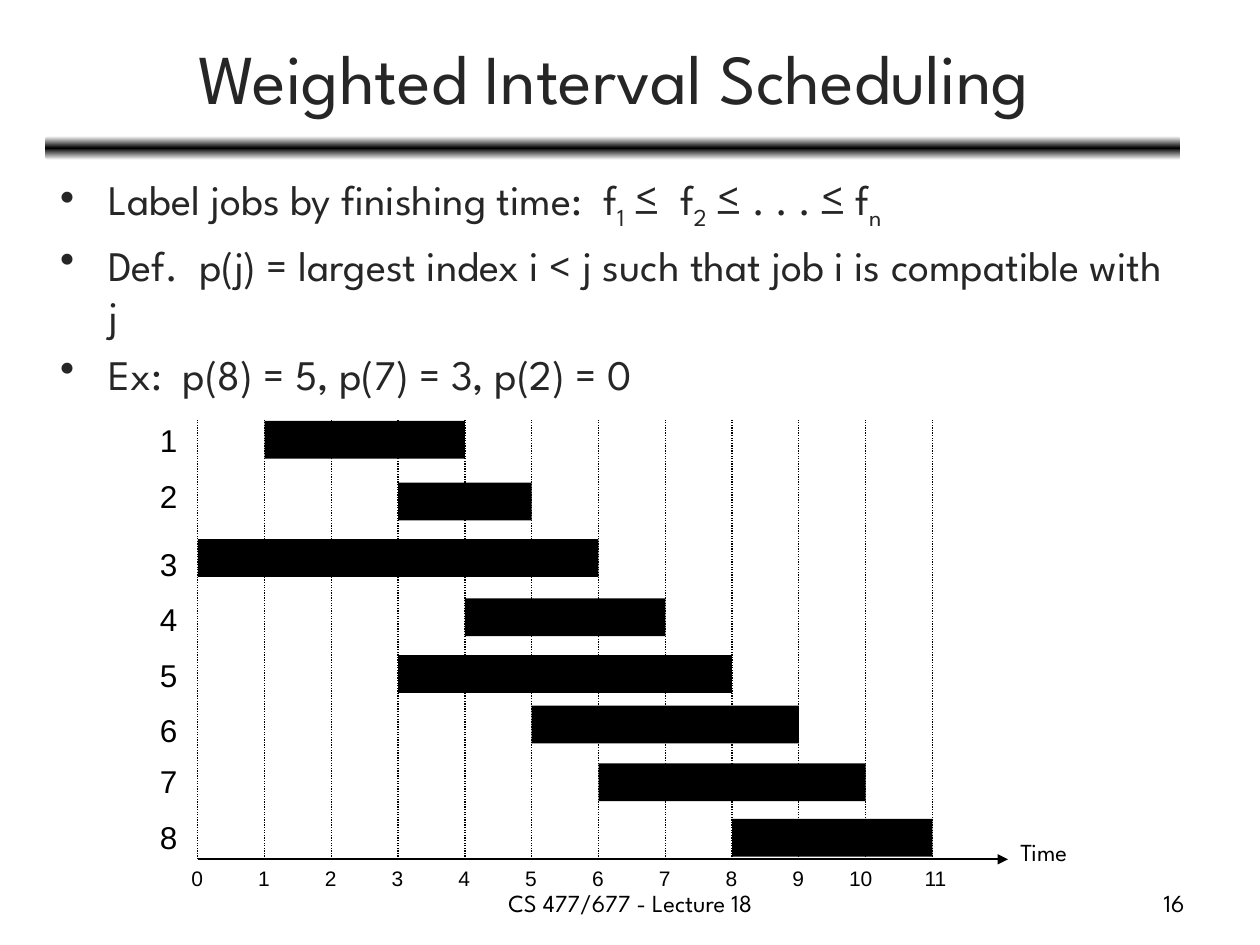
from copy import deepcopy
from typing import NamedTuple

from lxml.etree import SubElement
from pptx import Presentation
from pptx.dml.color import RGBColor
from pptx.enum.dml import MSO_LINE_DASH_STYLE as Dash
from pptx.enum.shapes import MSO_CONNECTOR, MSO_SHAPE as Shape
from pptx.enum.text import MSO_ANCHOR as Anchor, PP_ALIGN as Align
from pptx.oxml.ns import qn
from pptx.util import Inches, Pt

BLACK = RGBColor(0x00, 0x00, 0x00)
WHITE = RGBColor(0xFF, 0xFF, 0xFF)
CHARCOAL = RGBColor(0x26, 0x26, 0x26)
HEADING_FONT = "League Spartan"
LABEL_FONT = "Arial"

# Time axis, in inches
AXIS_LEFT, AXIS_RIGHT, AXIS_Y = 1.57, 8, 6.82
GRID_TOP, UNIT, LAST_TIME = 3.33, 0.53, 11
BAR_HEIGHT = 0.3
TICK_SHIFT = 0.15
WIDE_TICK_SHIFTS = {10: 0.23, 11: 0.16}


class Job(NamedTuple):
    start: int
    finish: int
    bar_top: float
    label_top: float


class Span(NamedTuple):
    text: str
    subscript: bool = False


JOBS = [
    Job(1, 4, 3.34, 3.29),
    Job(3, 5, 3.83, 3.74),
    Job(0, 6, 4.28, 4.28),
    Job(4, 7, 4.75, 4.71),
    Job(3, 8, 5.20, 5.16),
    Job(5, 9, 5.60, 5.59),
    Job(6, 10, 6.06, 6.00),
    Job(8, 11, 6.50, 6.44),
]

BULLETS = [
    [Span("Label jobs by finishing time:  f"), Span("1  ", True),
     Span("≤  f"), Span("2  ", True), Span("≤ . . . ≤ f"), Span("n", True)],
    [Span("Def.  p(j) = largest index i < j such that job i is compatible with j")],
    [Span("Ex:  p(8) = 5, p(7) = 3, p(2) = 0")],
]


def time_x(time: int) -> float:
    return AXIS_LEFT + time * UNIT


def set_font(paragraph, size: int, name: str, color: RGBColor) -> None:
    font = paragraph.font
    font.size, font.name = Pt(size), name
    font.color.rgb = color


def add_box(page, left: float, top: float, width: float, height: float):
    box = page.shapes.add_textbox(
        Inches(left), Inches(top), Inches(width), Inches(height))
    box.text_frame.word_wrap = True
    return box


def add_label(page, text: str, left: float, top: float, width: float,
              height: float, size: int, name: str = HEADING_FONT,
              color: RGBColor = BLACK, align: Align = Align.LEFT):
    frame = add_box(page, left, top, width, height).text_frame
    para = frame.paragraphs[0]
    para.text, para.alignment = text, align
    set_font(para, size, name, color)
    return frame


def add_bullets(page) -> None:
    frame = add_box(page, 0.38, 1.33, 9, 5.55).text_frame
    for index, spans in enumerate(BULLETS):
        para = frame.add_paragraph() if index else frame.paragraphs[0]
        para.space_before = Pt(4.8)
        set_font(para, 24, HEADING_FONT, CHARCOAL)
        properties = para._p.get_or_add_pPr()
        properties.set("marL", str(Inches(0.38)))
        properties.set("indent", str(Inches(-0.38)))
        bullet = SubElement(properties, qn("a:buChar"), char="•")
        properties.find(qn("a:defRPr")).addprevious(bullet)
        for span in spans:
            run = para.add_run()
            run.text = span.text
            if span.subscript:
                run._r.get_or_add_rPr().set("baseline", "-25000")


def add_line(page, x1: float, y1: float, x2: float, y2: float, weight: float):
    line = page.shapes.add_connector(
        MSO_CONNECTOR.STRAIGHT, Inches(x1), Inches(y1), Inches(x2), Inches(y2))
    line.line.color.rgb = BLACK
    line.line.width = Pt(weight)
    SubElement(line._element.spPr, qn("a:effectLst"))
    return line


def add_block(page, shape: Shape, left: float, top: float,
              width: float, height: float):
    block = page.shapes.add_shape(
        shape, Inches(left), Inches(top), Inches(width), Inches(height))
    block.shadow.inherit = False
    block.line.fill.background()
    block.fill.solid()
    block.fill.fore_color.rgb = BLACK
    return block


def add_title_rule(page) -> None:
    rule = add_block(page, Shape.ROUNDED_RECTANGLE, 0.36, 1.08, 9.01, 0.19)
    rule.fill.gradient()
    rule.fill.gradient_angle = 90
    first = next(rule._element.spPr.iter(qn("a:gs")))
    first.addnext(deepcopy(first))
    for stop, position, color in zip(
            rule.fill.gradient_stops, (0, 0.5, 1), (WHITE, BLACK, WHITE)):
        stop.position = position
        stop.color.rgb = color


def add_timeline(page) -> None:
    # Axis with arrowhead
    axis = add_line(page, AXIS_LEFT, AXIS_Y, AXIS_RIGHT, AXIS_Y, 1.25)
    SubElement(axis.line._get_or_add_ln(), qn("a:tailEnd"), type="triangle")
    add_label(page, "Time", AXIS_RIGHT, 6.59, 0.83, 0.34, 14)

    # Grid lines and tick labels
    for time in range(LAST_TIME + 1):
        x = time_x(time)
        grid = add_line(page, x, AXIS_Y, x, GRID_TOP, 0.75)
        grid.line.dash_style = Dash.ROUND_DOT
        shift = WIDE_TICK_SHIFTS.get(time, TICK_SHIFT)
        add_label(page, str(time), x - shift, AXIS_Y, 0.45, 0.34, 12, LABEL_FONT)

    # Job bars and numbers
    for number, job in enumerate(JOBS, start=1):
        add_block(page, Shape.RECTANGLE, time_x(job.start), job.bar_top,
                  (job.finish - job.start) * UNIT, BAR_HEIGHT)
        frame = add_label(page, str(number), 1.17, job.label_top, 0.34, 0.4,
                          18, LABEL_FONT)
        frame.word_wrap = False


def main() -> None:
    deck = Presentation()
    deck.slide_width, deck.slide_height = Inches(10), Inches(7.5)
    page = deck.slides.add_slide(deck.slide_layouts[6])

    # Heading
    add_title_rule(page)
    title = add_label(page, "Weighted Interval Scheduling", 0.37, 0.11, 9, 0.99,
                      40, color=CHARCOAL, align=Align.CENTER)
    title.vertical_anchor = Anchor.MIDDLE

    # Content
    add_bullets(page)
    add_timeline(page)

    # Footer
    add_label(page, "CS 477/677 - Lecture 18", 3.42, 7, 3.17, 0.35, 14,
              align=Align.CENTER)
    add_label(page, "16", 7.17, 7, 2.33, 0.35, 14, align=Align.RIGHT)

    deck.save("out.pptx")


if __name__ == "__main__":
    main()
